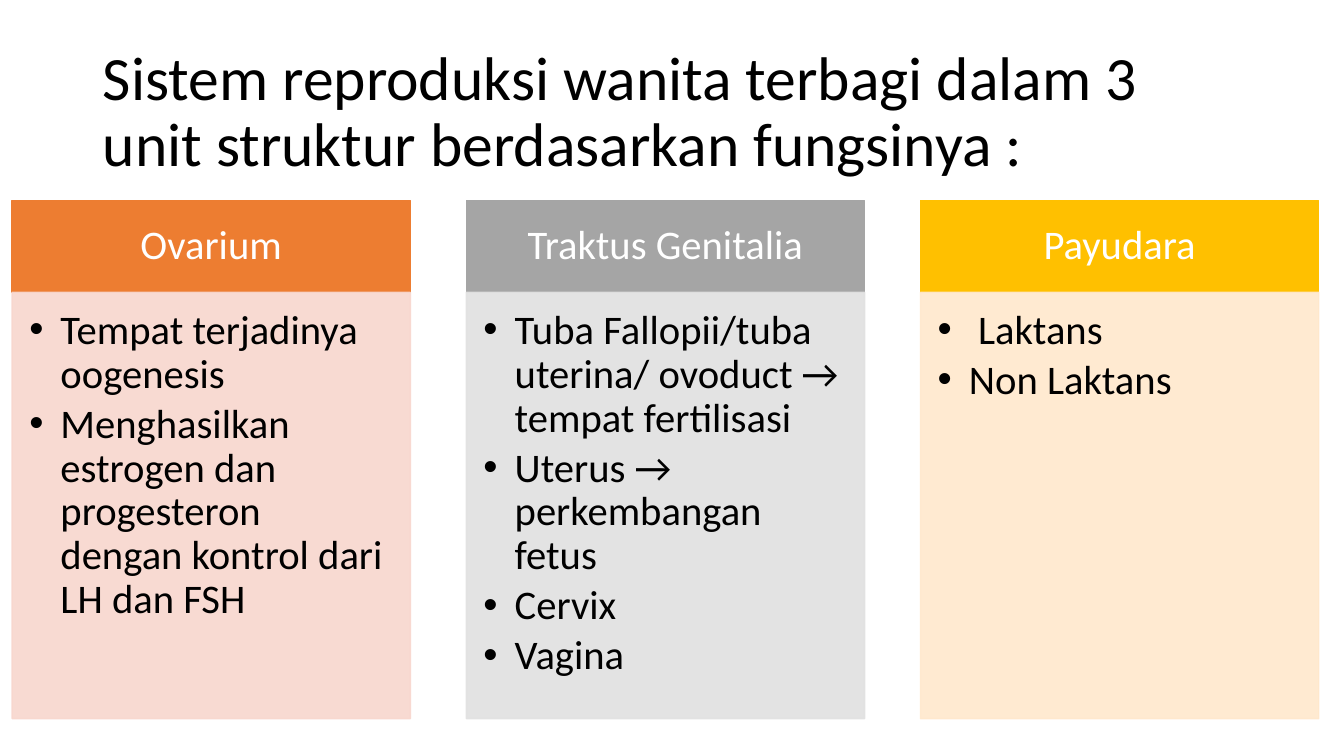
from lxml import etree
from pptx import Presentation
from pptx import util as u
from pptx.dml.color import RGBColor
from pptx.enum import shapes, text
from pptx.oxml.ns import qn

COLORS = {
    "black": "000000", "white": "FFFFFF",
    "orange": "ED7D31", "orange_tint": "F8D7CE",
    "gray": "A5A5A5", "gray_tint": "E1E1E1",
    "gold": "FFC000", "gold_tint": "FFE8CC",
}
UNITS = [
    ("Ovarium", "orange", [
        "Tempat terjadinya oogenesis",
        "Menghasilkan estrogen dan progesteron dengan kontrol dari LH dan FSH"]),
    ("Traktus Genitalia", "gray", [
        "Tuba Fallopii/tuba uterina/ ovoduct → tempat fertilisasi",
        "Uterus → perkembangan fetus", "Cervix", "Vagina"]),
    ("Payudara", "gold", [" Laktans", "Non Laktans"]),
]
LEFT, PITCH, WIDTH = 0.12, 4.505, 3.95
HEAD_TOP, HEAD_HEIGHT, BODY_HEIGHT = 1.99, 0.91, 4.23


class SlideBuilder:
    font = "Calibri"
    title_size, text_size = 44, 29

    def __init__(self, prs):
        self.s = prs.slides.add_slide(prs.slide_layouts[5])

    def run(self, p, words, size, color):
        p.line_spacing = 0.9
        r = p.add_run()
        r.text = words
        r.font.name = self.font
        r.font.size = u.Pt(size)
        r.font.color.rgb = RGBColor.from_string(COLORS[color])

    def title(self, words, left, top, width, height):
        sp = self.s.shapes.title
        sp.left, sp.top = u.Inches(left), u.Inches(top)
        sp.width, sp.height = u.Inches(width), u.Inches(height)
        tf = sp.text_frame
        tf.auto_size = text.MSO_AUTO_SIZE.NONE
        tf.vertical_anchor = text.MSO_ANCHOR.MIDDLE
        p = tf.paragraphs[0]
        p.alignment = text.PP_ALIGN.LEFT
        self.run(p, words, self.title_size, "black")

    def box(self, left, top, height, color, insets, anchor, opacity=100):
        """Add a filled column box and return its empty text frame."""
        sp = self.s.shapes.add_shape(
            shapes.MSO_SHAPE.RECTANGLE, u.Inches(left), u.Inches(top),
            u.Inches(WIDTH), u.Inches(height))
        sp.shadow.inherit = False
        sp.line.width = u.Pt(1)
        for fill in (sp.fill, sp.line.fill):
            fill.solid()
            fill.fore_color.rgb = RGBColor.from_string(COLORS[color])
        if opacity < 100:
            for clr in sp.element.spPr.iter(qn("a:srgbClr")):
                etree.SubElement(clr, qn("a:alpha"), val=str(opacity * 1000))
        tf = sp.text_frame
        tf.word_wrap = True
        tf.vertical_anchor = anchor
        (tf.margin_left, tf.margin_top,
         tf.margin_right, tf.margin_bottom) = map(u.Inches, insets)
        return tf

    def heading(self, words, left, color):
        tf = self.box(left, HEAD_TOP, HEAD_HEIGHT, color,
                      (0.23, 0.13, 0.23, 0.13), text.MSO_ANCHOR.MIDDLE)
        p = tf.paragraphs[0]
        p.alignment = text.PP_ALIGN.CENTER
        self.run(p, words, self.text_size, "white")

    def bullets(self, items, left, color):
        tf = self.box(left, HEAD_TOP + HEAD_HEIGHT, BODY_HEIGHT, color,
                      (0.17, 0.17, 0.23, 0.25), text.MSO_ANCHOR.TOP, opacity=90)
        for i, item in enumerate(items):
            p = tf.add_paragraph() if i else tf.paragraphs[0]
            p.level = 1
            p.alignment = text.PP_ALIGN.LEFT
            p.space_after = u.Pt(0.15 * self.text_size)
            pPr = p._p.get_or_add_pPr()
            pPr.set("marL", str(u.Inches(0.31)))
            pPr.set("indent", str(-u.Inches(0.31)))
            etree.SubElement(pPr, qn("a:buFont"), typeface="Arial")
            etree.SubElement(pPr, qn("a:buChar"), char="•")
            self.run(p, item, self.text_size, "black")


def main():
    prs = Presentation()
    prs.slide_width, prs.slide_height = u.Inches(13.33), u.Inches(7.5)
    slide = SlideBuilder(prs)
    slide.title("Sistem reproduksi wanita terbagi dalam 3 unit struktur "
                "berdasarkan fungsinya :", 0.92, 0.4, 11.5, 1.45)
    for i, (name, color, items) in enumerate(UNITS):
        left = LEFT + i * PITCH
        slide.heading(name, left, color)
        slide.bullets(items, left, color + "_tint")
    prs.save("out.pptx")


if __name__ == "__main__":
    main()
